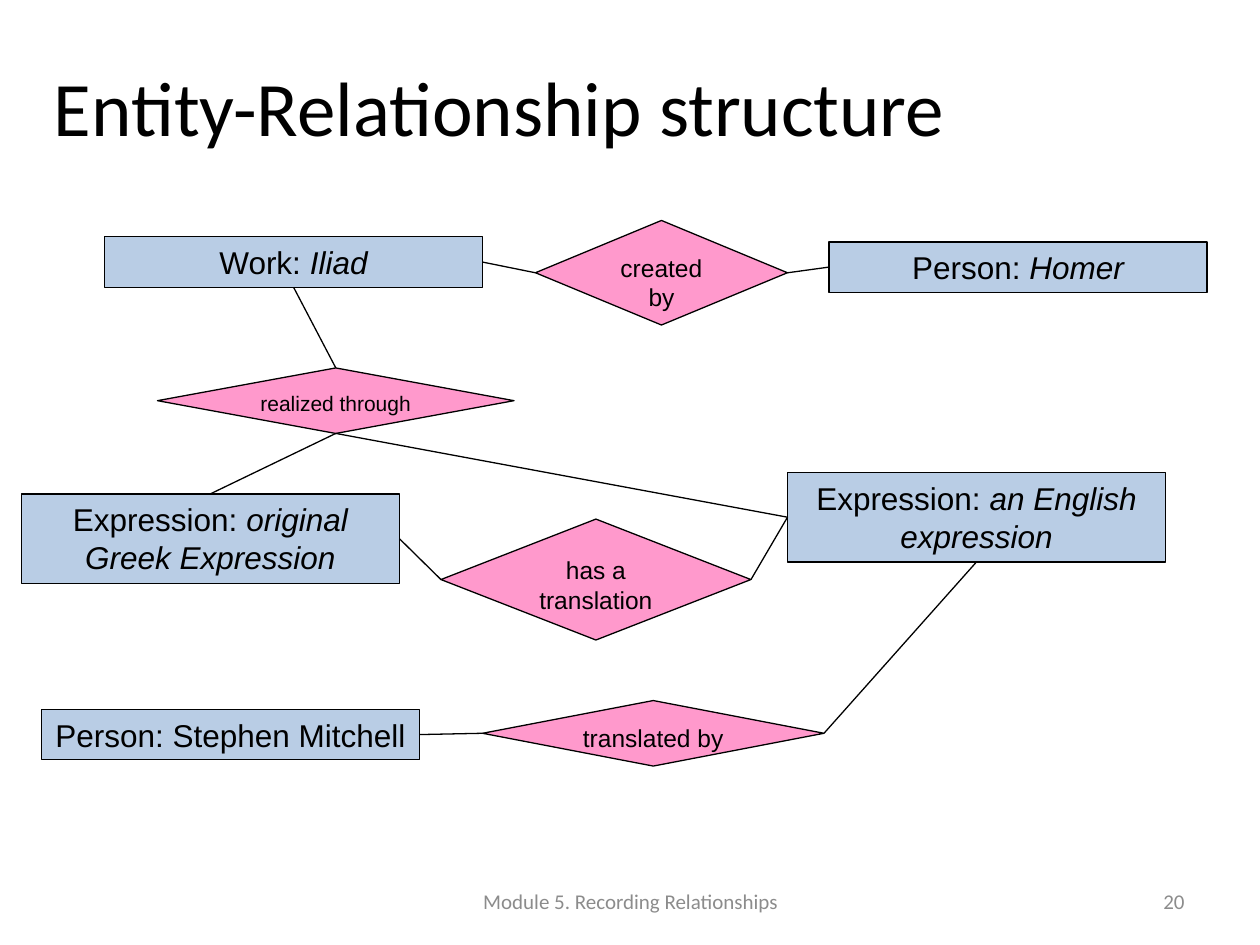
from dataclasses import dataclass

from lxml import etree
from pptx import Presentation
from pptx.dml.color import RGBColor
from pptx.enum.shapes import MSO_CONNECTOR, MSO_SHAPE
from pptx.enum.text import MSO_ANCHOR, MSO_AUTO_SIZE, PP_ALIGN
from pptx.oxml.ns import qn
from pptx.util import Inches, Pt

STRAIGHT = MSO_CONNECTOR.STRAIGHT
RECTANGLE, DECISION = MSO_SHAPE.RECTANGLE, MSO_SHAPE.FLOWCHART_DECISION
ANCHOR_TOP, ANCHOR_MIDDLE = MSO_ANCHOR.TOP, MSO_ANCHOR.MIDDLE
GROW = MSO_AUTO_SIZE.SHAPE_TO_FIT_TEXT
LEFT, CENTER, RIGHT = PP_ALIGN.LEFT, PP_ALIGN.CENTER, PP_ALIGN.RIGHT

BLACK = RGBColor(0x00, 0x00, 0x00)
GRAY = RGBColor(0x8C, 0x8C, 0x8C)
BLUE = RGBColor(0xB9, 0xCD, 0xE5)
PINK = RGBColor(0xFF, 0x99, 0xCC)

LINE_WIDTH = Pt(0.75)
ENTITY_WIDTH = 3
TOP_SIDE, LEFT_SIDE, BOTTOM_SIDE, RIGHT_SIDE = range(4)


@dataclass
class Entity:
    kind: str
    name: str
    left: float
    top: float
    height: float = 0.4
    italic: bool = True


@dataclass
class Relationship:
    label: str
    left: float
    top: float
    width: float
    height: float
    size: int = 14


@dataclass
class Link:
    start: str
    start_side: int
    end: str
    end_side: int


@dataclass
class Caption:
    text: str
    left: float
    top: float
    width: float
    height: float
    size: int
    color: RGBColor
    align: PP_ALIGN
    anchor: MSO_ANCHOR


ENTITIES = {
    "work": Entity("Work: ", "Iliad", 0.83, 1.88),
    "translator": Entity("Person: ", "Stephen Mitchell", 0.33, 5.63, italic=False),
    "author": Entity("Person: ", "Homer", 6.58, 1.92),
    "english": Entity("Expression: ", "an English expression", 6.25, 3.75, 0.71),
    "greek": Entity("Expression: ", "original Greek Expression", 0.17, 3.92, 0.71),
}

RELATIONSHIPS = {
    "realized": Relationship("realized through", 1.25, 2.92, 2.83, 0.52, 12),
    "translated": Relationship("translated by", 3.83, 5.56, 2.71, 0.52),
    "translation": Relationship("has a translation", 3.5, 4.12, 2.46, 0.96),
    "created": Relationship("created by", 4.25, 1.75, 2, 0.83),
}

LINKS = [
    Link("created", RIGHT_SIDE, "author", LEFT_SIDE),
    Link("created", LEFT_SIDE, "work", RIGHT_SIDE),
    Link("work", BOTTOM_SIDE, "realized", TOP_SIDE),
    Link("realized", BOTTOM_SIDE, "greek", TOP_SIDE),
    Link("realized", BOTTOM_SIDE, "english", LEFT_SIDE),
    Link("greek", RIGHT_SIDE, "translation", LEFT_SIDE),
    Link("translation", RIGHT_SIDE, "english", LEFT_SIDE),
    Link("english", BOTTOM_SIDE, "translated", RIGHT_SIDE),
    Link("translated", LEFT_SIDE, "translator", RIGHT_SIDE),
]

CAPTIONS = [
    Caption("Entity-Relationship structure", 0.33, 0.42, 9, 1.25, 44,
            BLACK, LEFT, ANCHOR_TOP),
    Caption("Module 5. Recording Relationships", 3.42, 6.95, 3.17, 0.4, 12,
            GRAY, CENTER, ANCHOR_MIDDLE),
    Caption("20", 7.17, 6.95, 2.33, 0.4, 12, GRAY, RIGHT, ANCHOR_MIDDLE),
]


def add_run(paragraph, text: str, font: str, size: int, color: RGBColor,
            italic: bool = False) -> None:
    run = paragraph.add_run()
    run.text = text
    run.font.color.rgb = color
    for attribute, value in {"name": font, "size": Pt(size), "italic": italic}.items():
        setattr(run.font, attribute, value)


def set_frame(frame, align: PP_ALIGN, anchor: MSO_ANCHOR):
    """Lay out the text frame and return its first paragraph."""
    frame.word_wrap = True
    frame.vertical_anchor = anchor
    paragraph = frame.paragraphs[0]
    paragraph.alignment = align
    return paragraph


def add_node(slide, preset: MSO_SHAPE, left: float, top: float, width: float,
             height: float, fill: RGBColor):
    node = slide.shapes.add_shape(preset, Inches(left), Inches(top),
                                  Inches(width), Inches(height))
    node.shadow.inherit = False
    node.fill.solid()
    node.fill.fore_color.rgb = fill
    node.line.color.rgb = BLACK
    node.line.width = LINE_WIDTH
    return node


def add_entity(slide, entity: Entity):
    node = add_node(slide, RECTANGLE, entity.left, entity.top,
                    ENTITY_WIDTH, entity.height, BLUE)
    paragraph = set_frame(node.text_frame, CENTER, ANCHOR_TOP)
    node.text_frame.auto_size = GROW
    add_run(paragraph, entity.kind, "Arial", 18, BLACK)
    add_run(paragraph, entity.name, "Arial", 18, BLACK, entity.italic)
    return node


def add_relationship(slide, relation: Relationship):
    node = add_node(slide, DECISION, relation.left, relation.top,
                    relation.width, relation.height, PINK)
    paragraph = set_frame(node.text_frame, CENTER, ANCHOR_TOP)
    add_run(paragraph, relation.label, "Arial", relation.size, BLACK)
    return node


def add_link(slide, link: Link, nodes: dict) -> None:
    connector = slide.shapes.add_connector(STRAIGHT, 0, 0, 0, 0)
    connector.begin_connect(nodes[link.start], link.start_side)
    connector.end_connect(nodes[link.end], link.end_side)
    connector.line.color.rgb = BLACK
    connector.line.width = LINE_WIDTH
    etree.SubElement(connector._element.spPr, qn("a:effectLst"))


def add_caption(slide, caption: Caption) -> None:
    box = slide.shapes.add_textbox(Inches(caption.left), Inches(caption.top),
                                   Inches(caption.width), Inches(caption.height))
    paragraph = set_frame(box.text_frame, caption.align, caption.anchor)
    add_run(paragraph, caption.text, "Calibri", caption.size, caption.color)


def main() -> None:
    presentation = Presentation()
    presentation.slide_width = Inches(10)
    presentation.slide_height = Inches(7.5)
    slide = presentation.slides.add_slide(presentation.slide_layouts[6])

    for caption in CAPTIONS:
        add_caption(slide, caption)
    nodes = {key: add_entity(slide, entity) for key, entity in ENTITIES.items()}
    for key, relation in RELATIONSHIPS.items():
        nodes[key] = add_relationship(slide, relation)
    for link in LINKS:
        add_link(slide, link, nodes)

    presentation.save("out.pptx")


if __name__ == "__main__":
    main()
